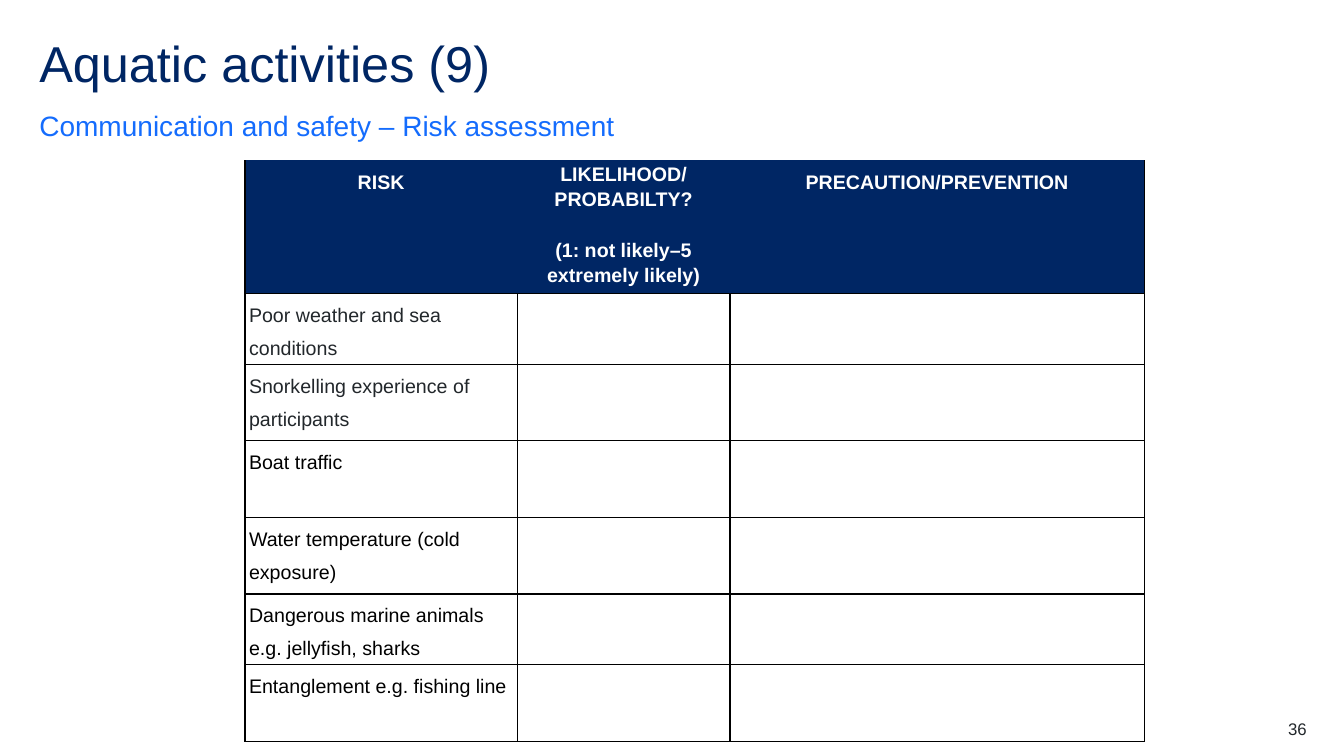
from lxml import etree
from pptx import Presentation
from pptx import util as u
from pptx.dml.color import RGBColor
from pptx.enum import text
from pptx.oxml.ns import qn

NAVY = RGBColor(0x00, 0x26, 0x64)
BLUE = RGBColor(0x14, 0x6C, 0xFD)
CHARCOAL = RGBColor(0x22, 0x27, 0x2B)
BLACK = RGBColor(0, 0, 0)
WHITE = RGBColor(255, 255, 255)

FONT = "Arial"
LEFT, CENTER, RIGHT = text.PP_ALIGN.LEFT, text.PP_ALIGN.CENTER, text.PP_ALIGN.RIGHT
COLUMN_WIDTHS = (2.7, 2.11, 4.11)
ROW_HEIGHTS = (0.7, 0.62, 0.76, 0.76, 0.76, 0.62, 0.76)
HEADINGS = (
    (["RISK"], 1.5),
    (["LIKELIHOOD/ PROBABILTY?", "(1: not likely–5 extremely likely)"], 1.15),
    (["PRECAUTION/PREVENTION"], 1.5),
)
RISKS = (
    ("Poor weather and sea conditions", CHARCOAL),
    ("Snorkelling experience of participants", CHARCOAL),
    ("Boat traffic", BLACK),
    ("Water temperature (cold exposure)", BLACK),
    ("Dangerous marine animals e.g. jellyfish, sharks", BLACK),
    ("Entanglement e.g. fishing line", BLACK),
)


def set_all(target, values):
    for name, value in values.items():
        setattr(target, name, value)


def write(frame, lines, size, color, bold=False, **layout):
    """Fill a text frame with one paragraph per line."""
    for index, line in enumerate(lines):
        para = frame.add_paragraph() if index else frame.paragraphs[0]
        set_all(para, layout)
        if index == 0:
            para.space_before = u.Pt(0)
        span = para.add_run()
        span.text = line
        set_all(span.font, {"name": FONT, "size": u.Pt(size), "bold": bold})
        span.font.color.rgb = color


def add_text(page, box, line, size, color, anchor=text.MSO_ANCHOR.TOP, **layout):
    frame = page.shapes.add_textbox(*map(u.Inches, box)).text_frame
    set_all(frame, {"word_wrap": True, "vertical_anchor": anchor,
                    "margin_left": 0, "margin_right": 0,
                    "margin_top": 0, "margin_bottom": 0})
    write(frame, [line], size, color, **layout)


def set_borders(cell, sides):
    """Draw black borders on the given sides and clear the others."""
    properties = cell._tc.get_or_add_tcPr()
    for side in "LRTB":
        line = etree.SubElement(properties, qn(f"a:ln{side}"), w=str(u.Pt(1)))
        if side in sides:
            fill = etree.SubElement(line, qn("a:solidFill"))
            etree.SubElement(fill, qn("a:srgbClr"), val=str(BLACK))
        else:
            etree.SubElement(line, qn("a:noFill"))


def add_header(page, box):
    left, top, width, height = box
    add_text(page, (left, top, width, 0.6), "Aquatic activities (9)",
             36, NAVY, line_spacing=0.9)
    add_text(page, (left, top + height - 0.34, width, 0.34),
             "Communication and safety – Risk assessment", 20, BLUE,
             anchor=text.MSO_ANCHOR.BOTTOM, line_spacing=1.5)


def add_risk_table(page, box):
    table = page.shapes.add_table(len(ROW_HEIGHTS), len(COLUMN_WIDTHS),
                                  *map(u.Inches, box)).table
    table.horz_banding = False
    for column, width in zip(table.columns, COLUMN_WIDTHS):
        column.width = u.Inches(width)
    for row, height in zip(table.rows, ROW_HEIGHTS):
        row.height = u.Inches(height)

    # Margins shared by every cell
    for cell in table.iter_cells():
        set_all(cell, {"margin_left": u.Inches(0.04), "margin_right": u.Inches(0.04),
                       "margin_top": 0, "margin_bottom": 0})

    # Heading row, outlined except along the top
    for column, (lines, spacing) in enumerate(HEADINGS):
        cell = table.cell(0, column)
        set_borders(cell, ("LB", "B", "RB")[column])
        cell.fill.solid()
        cell.fill.fore_color.rgb = NAVY
        write(cell.text_frame, lines, 14, WHITE, bold=True, alignment=CENTER,
              line_spacing=spacing, space_before=u.Pt(12), space_after=u.Pt(6))

    # One row per risk, with two cells left to fill in
    for row, (risk, color) in enumerate(RISKS, start=1):
        for column in range(len(COLUMN_WIDTHS)):
            cell = table.cell(row, column)
            set_borders(cell, "LRTB")
            cell.fill.background()
            cell.text_frame.paragraphs[0].font.size = u.Pt(14)
        write(table.cell(row, 0).text_frame, [risk], 14, color, alignment=LEFT,
              line_spacing=1.5, space_after=u.Pt(6))


def add_page_number(page, box):
    add_text(page, box, "36", 12, CHARCOAL, alignment=RIGHT)


def main():
    deck = Presentation()
    deck.slide_width, deck.slide_height = u.Inches(13.33), u.Inches(7.5)
    page = deck.slides.add_slide(deck.slide_layouts[6])
    add_header(page, (0.39, 0.39, 12.56, 1.02))
    add_page_number(page, (12.17, 7.13, 0.79, 0.2))
    add_risk_table(page, (2.43, 1.59, sum(COLUMN_WIDTHS), sum(ROW_HEIGHTS)))
    deck.save("out.pptx")


if __name__ == "__main__":
    main()
